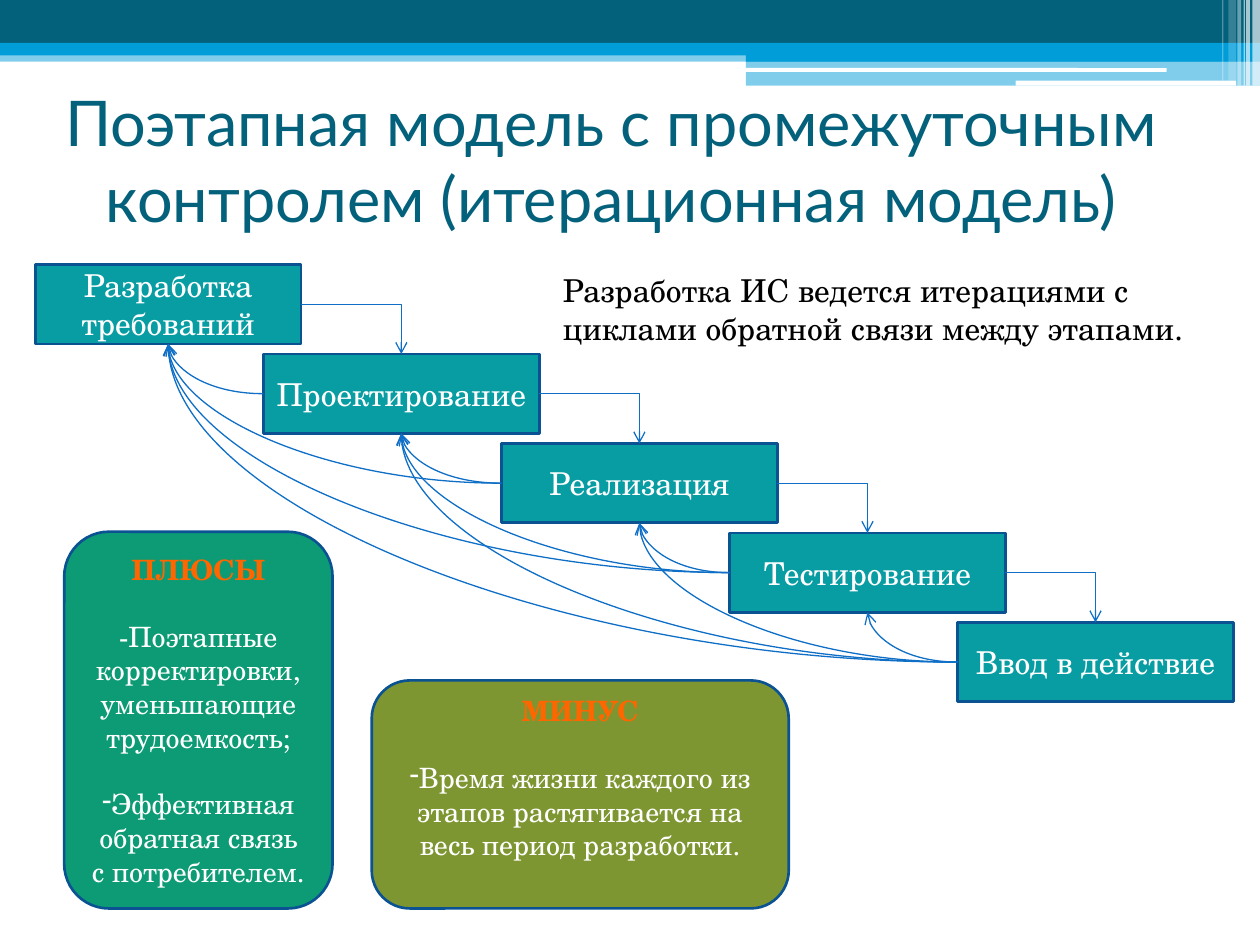
from itertools import combinations
from lxml import etree
from pptx import Presentation
from pptx.dml.color import RGBColor
from pptx.enum.shapes import MSO_CONNECTOR as LINE, MSO_SHAPE as SHAPE
from pptx.enum.text import MSO_ANCHOR as ANCHOR, PP_ALIGN as ALIGN
from pptx.oxml.ns import qn
from pptx.util import Inches, Pt

FONT = "TeX Gyre Schola"
TEAL, BLUE, WHITE, OUTLINE = "04617B", "009DD9", "FFFFFF", "0B5292"
STEPS = ["Разработка требований", "Проектирование", "Реализация",
         "Тестирование", "Ввод в действие"]
STEP_LEFTS = [0.28, 2.09, 3.98, 5.79, 7.6]
STEP_TOP, STEP_PITCH, STEP_HEIGHT = 2.1, 0.71, 0.63
TOP, LEFT, BOTTOM, RIGHT = range(4)
LINE_GAP = Pt(19)

# left, top, width, height, colour, opacity in percent
BANDS = [
    (0, 0.4, 10, 0.09, BLUE, 50),
    (0, 0, 10, 0.34, TEAL, 100),
    (0, 0.34, 10, 0.1, BLUE, 100),
    (5.92, 0.39, 4.08, 0.1, BLUE, 100),
    (5.92, 0.48, 4.08, 0.2, BLUE, 50),
]
WHITE_BARS = [(5.91, 0.54, 3.35, 0.03), (8.06, 0.64, 1.75, 0.04)]
# left, width, height, opacity in percent
STRIPES = [(9.94, 0.06, 0.68, 65), (9.89, 0.03, 0.68, 65),
           (9.87, 0.01, 0.68, 60), (9.82, 0.03, 0.68, 40),
           (9.75, 0.06, 0.64, 20), (9.7, 0.01, 0.64, 30)]


def rgb(color):
    return RGBColor.from_string(color)


def add_box(slide, kind, box, fill, outline=None, opacity=100):
    s = slide.shapes.add_shape(kind, *map(Inches, box))
    s.shadow.inherit = False
    s.fill.solid()
    s.fill.fore_color.rgb = rgb(fill)
    if opacity < 100:
        clr = s.fill._xPr.find(".//" + qn("a:srgbClr"))
        etree.SubElement(clr, qn("a:alpha"), val=str(opacity * 1000))
    if outline:
        s.line.color.rgb = rgb(outline)
        s.line.width = Pt(1.5)
    else:
        s.line.fill.background()
    return s


def style(p, size, color, align=ALIGN.CENTER, font=FONT, bold=False):
    p.alignment = align
    p.font.name = font
    p.font.size = Pt(size)
    p.font.bold = bold
    p.font.color.rgb = rgb(color)


def add_decoration(slide):
    for *box, color, opacity in BANDS:
        add_box(slide, SHAPE.RECTANGLE, box, color, opacity=opacity)
    for box in WHITE_BARS:
        add_box(slide, SHAPE.ROUNDED_RECTANGLE, box, WHITE)
    for left, width, height, opacity in STRIPES:
        add_box(slide, SHAPE.RECTANGLE, (left, 0, width, height), WHITE,
                opacity=opacity)


def set_title(slide, text):
    s = slide.shapes.title
    s.left, s.top, s.width, s.height = map(Inches, (0.35, 0.68, 9, 1.17))
    tf = s.text_frame
    tf.text = text
    tf.vertical_anchor = ANCHOR.MIDDLE
    style(tf.paragraphs[0], 36, TEAL, font="Lato")


def add_step(slide, index):
    width = 2.19 if index else 2.11
    box = (STEP_LEFTS[index], STEP_TOP + STEP_PITCH * index, width, STEP_HEIGHT)
    s = add_box(slide, SHAPE.RECTANGLE, box, "089CA3", OUTLINE)
    s.text_frame.text = STEPS[index]
    style(s.text_frame.paragraphs[0], 18, WHITE)
    return s


def link(slide, kind, preset, start, start_side, end, end_side):
    """Join two steps with a two-segment connector ending in an arrowhead."""
    c = slide.shapes.add_connector(kind, 0, 0, 0, 0)
    c.begin_connect(start, start_side)
    c.end_connect(end, end_side)
    c.line.color.rgb = rgb("0F6FC6")
    c.line.width = Pt(0.75)
    sp_pr = c._element.spPr
    sp_pr.find(qn("a:prstGeom")).set("prst", preset)
    etree.SubElement(sp_pr.find(qn("a:ln")), qn("a:tailEnd"), type="arrow")
    etree.SubElement(sp_pr, qn("a:effectLst"))


def add_note(slide, text):
    s = slide.shapes.add_textbox(*map(Inches, (4.37, 2.1, 5.2, 0.71)))
    tf = s.text_frame
    tf.word_wrap = True
    tf.text = text
    style(tf.paragraphs[0], 18, "000000", ALIGN.LEFT)


def add_dash_bullet(p):
    p_pr = p._p.get_or_add_pPr()
    p_pr.set("marL", "0")
    p_pr.set("indent", "0")
    bullet = etree.Element(qn("a:buChar"), char="-")
    p_pr.find(qn("a:defRPr")).addprevious(bullet)


def add_card(slide, box, fill, heading, items):
    """Rounded card; items are (text, has_bullet) pairs."""
    s = add_box(slide, SHAPE.ROUNDED_RECTANGLE, box, fill, OUTLINE)
    tf = s.text_frame
    tf.text = heading
    style(tf.paragraphs[0], 16, "FF6600", bold=True)
    for text, has_bullet in items:
        p = tf.add_paragraph()
        p.text = text
        p.space_before = LINE_GAP
        style(p, 16, WHITE)
        if has_bullet:
            add_dash_bullet(p)
    return s


def main():
    prs = Presentation()
    prs.slide_width, prs.slide_height = Inches(10), Inches(7.5)
    slide = prs.slides.add_slide(prs.slide_layouts[5])
    add_decoration(slide)
    set_title(slide, "Поэтапная модель с промежуточным контролем "
                     "(итерационная модель)")
    steps = [add_step(slide, i) for i in range(len(STEPS))]
    for step, following in zip(steps, steps[1:]):
        link(slide, LINE.ELBOW, "bentConnector2", step, RIGHT, following, TOP)
    for earlier, later in combinations(steps, 2):
        link(slide, LINE.CURVE, "curvedConnector2", later, LEFT, earlier, BOTTOM)
    add_note(slide, "Разработка ИС ведется итерациями с циклами обратной "
                    "связи между этапами.")
    add_card(slide, (0.51, 4.22, 2.13, 2.99), "0C9B74", "ПЛЮСЫ", [
        ("-Поэтапные корректировки, уменьшающие трудоемкость;", False),
        ("Эффективная обратная связь с потребителем.", True)])
    minus = add_card(slide, (2.95, 5.4, 3.31, 1.81), "7E9632", "МИНУС", [
        ("Время жизни каждого из этапов растягивается на весь период "
         "разработки.", True)])
    minus.text_frame.margin_bottom = Inches(0.05) + LINE_GAP
    prs.save("out.pptx")


if __name__ == "__main__":
    main()
